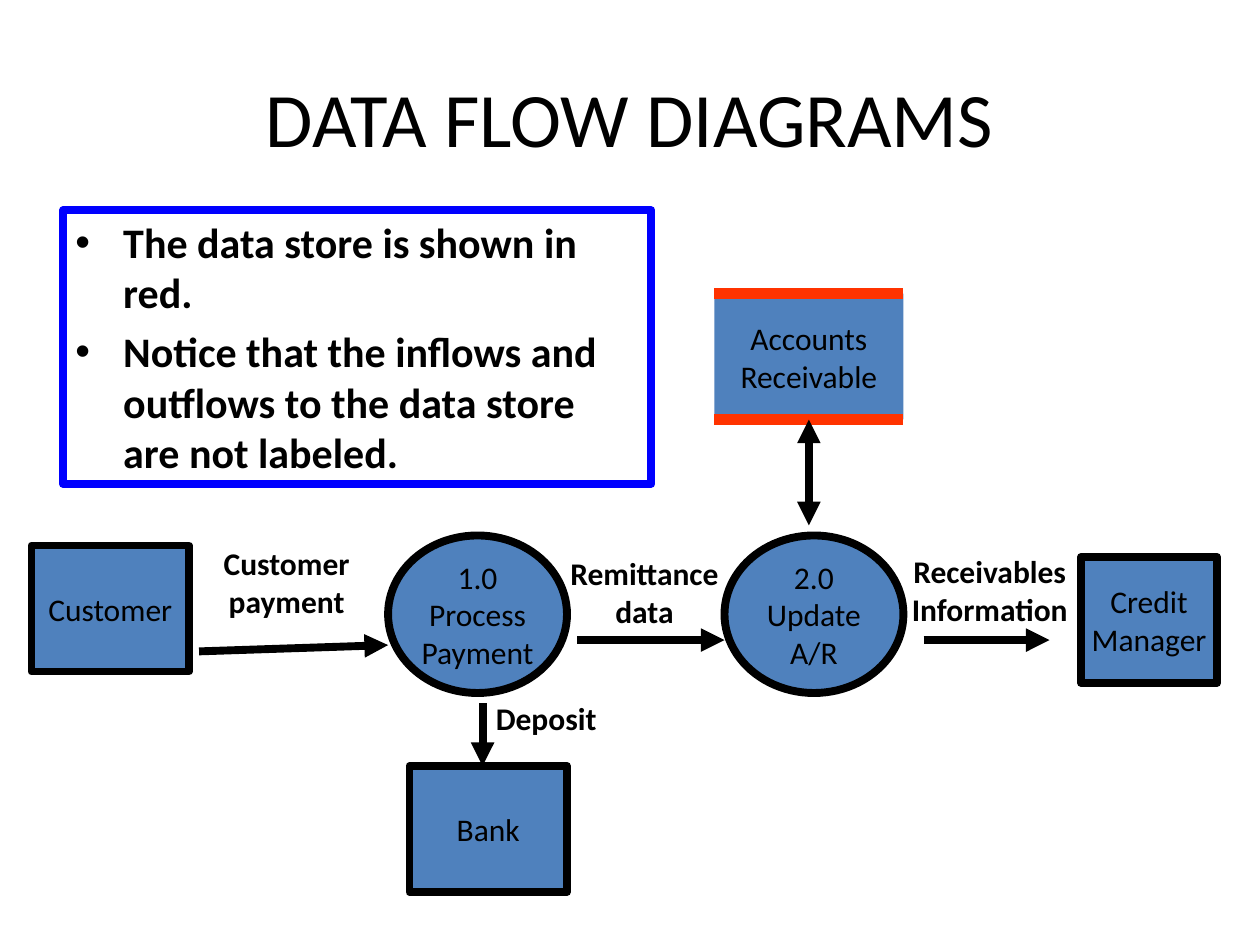
from lxml import etree
from pptx import Presentation
from pptx.dml.color import RGBColor
from pptx.enum.shapes import MSO_CONNECTOR, MSO_SHAPE
from pptx.enum.text import MSO_ANCHOR, MSO_AUTO_SIZE, PP_ALIGN
from pptx.oxml.ns import qn
from pptx.util import Pt

RECT, OVAL = MSO_SHAPE.RECTANGLE, MSO_SHAPE.OVAL
STRAIGHT = MSO_CONNECTOR.STRAIGHT
TOP, MIDDLE = MSO_ANCHOR.TOP, MSO_ANCHOR.MIDDLE
LEFT, CENTER = PP_ALIGN.LEFT, PP_ALIGN.CENTER
GROW = MSO_AUTO_SIZE.SHAPE_TO_FIT_TEXT

EMU_PER_PX = 9144
BLACK, WHITE, BLUE, RED, STEEL = "000000", "FFFFFF", "0000FF", "FF3300", "4F81BD"
STROKE, STORE_STROKE = 4.5, 6
BULLET_INDENT = 38


def px(*lengths):
    """Turn px lengths into EMU."""
    return [length * EMU_PER_PX for length in lengths]


def color(hex_value):
    """Turn a hex string into a colour."""
    return RGBColor.from_string(hex_value)


def inside(box, left, top, width, height):
    """Move an area given relative to a box onto the slide."""
    return box[0] + left, box[1] + top, width, height


def set_text(shape, text, size=18, bold=False, align=CENTER, **frame_format):
    """Write lines of text into a shape and format them."""
    frame = shape.text_frame
    frame.text = text
    for attribute, value in frame_format.items():
        setattr(frame, attribute, value)
    font_format = {"name": "Calibri", "size": Pt(size), "bold": bold}
    for paragraph in frame.paragraphs:
        paragraph.alignment = align
        for run in paragraph.runs:
            run.font.color.rgb = color(BLACK)
            for attribute, value in font_format.items():
                setattr(run.font, attribute, value)


def add_node(slide, area, kind, fill, outline=None):
    """Add a filled shape with an optional outline."""
    node = slide.shapes.add_shape(kind, *px(*area))
    node.shadow.inherit = False
    node.fill.solid()
    node.fill.fore_color.rgb = color(fill)
    if outline:
        node.line.color.rgb = color(outline)
        node.line.width = Pt(STROKE)
    else:
        node.line.fill.background()
    return node


def add_flow(slide, box, start, end, stroke=BLACK, width=STROKE, arrows=("tailEnd",)):
    """Add a straight line with arrowheads at the named ends."""
    ends = [box[axis] + point[axis] for point in (start, end) for axis in (0, 1)]
    flow = slide.shapes.add_connector(STRAIGHT, *px(*ends))
    flow.line.color.rgb = color(stroke)
    flow.line.width = Pt(width)
    properties = flow.line._get_or_add_ln()
    for arrow in arrows:
        etree.SubElement(properties, qn(f"a:{arrow}"), type="triangle")
    etree.SubElement(properties.getparent(), qn("a:effectLst"))


def add_title(slide, box):
    """Place the slide heading."""
    heading = slide.shapes.add_textbox(*px(*box))
    set_text(heading, "DATA FLOW DIAGRAMS", 44, word_wrap=True, vertical_anchor=MIDDLE)


def add_store(slide, box):
    """Place the data store between its two red rules."""
    left, top, width, height = box
    store = add_node(slide, box, RECT, STEEL)
    set_text(store, "Accounts\nReceivable", word_wrap=False, vertical_anchor=MIDDLE)
    for edge in (0, height):
        add_flow(slide, box, (0, edge), (width, edge), RED, STORE_STROKE, ())


def add_diagram(slide, box):
    """Place the entities, processes, data store, flows and flow labels."""
    nodes = [
        ("Customer", RECT, (0, 200, 125, 100)),
        ("1.0\nProcess\nPayment", OVAL, (283, 192, 142, 125)),
        ("2.0\nUpdate\nA/R", OVAL, (550, 192, 142, 125)),
        ("Credit\nManager", RECT, (833, 209, 108, 100)),
        ("Bank", RECT, (300, 375, 125, 100)),
    ]
    flows = [
        ((133, 284), (283, 279)),
        ((433, 275), (550, 275)),
        ((708, 275), (808, 275)),
        ((358, 325), (358, 375)),
    ]
    labels = [
        ("Customer\npayment", (142, 194, 121, 71)),
        ("Remittance\ndata", (417, 202, 139, 71)),
        ("Receivables\nInformation", (688, 200, 145, 71)),
        ("Deposit", (358, 317, 101, 40)),
    ]
    for text, kind, area in nodes:
        node = add_node(slide, inside(box, *area), kind, STEEL, BLACK)
        set_text(node, text, word_wrap=False, vertical_anchor=MIDDLE)
    add_store(slide, inside(box, 542, 0, 150, 100))
    for start, end in flows:
        add_flow(slide, box, start, end)
    add_flow(slide, box, (617, 184), (617, 100), arrows=("headEnd", "tailEnd"))
    for text, area in labels:
        label = slide.shapes.add_textbox(*px(*inside(box, *area)))
        set_text(label, text, bold=True, word_wrap=False, auto_size=GROW)


def add_notes_panel(slide, box):
    """Place the framed list of remarks on the data store."""
    remarks = (
        "The data store is shown in red.\n"
        "Notice that the inflows and outflows to the data store are not labeled."
    )
    panel = add_node(slide, box, RECT, WHITE, BLUE)
    set_text(panel, remarks, 24, True, LEFT, word_wrap=True, vertical_anchor=TOP)
    indent, = px(BULLET_INDENT)
    for paragraph in panel.text_frame.paragraphs:
        paragraph.space_before = Pt(4.8)
        properties = paragraph._p.get_or_add_pPr()
        properties.set("marL", str(indent))
        properties.set("indent", str(-indent))
        etree.SubElement(properties, qn("a:buFont"), typeface="Arial")
        etree.SubElement(properties, qn("a:buChar"), char="•")


def main():
    """Build and save the slide."""
    deck = Presentation()
    deck.slide_width, deck.slide_height = px(1000, 750)
    slide = deck.slides.add_slide(deck.slide_layouts[6])
    add_title(slide, (50, 30, 900, 125))
    add_diagram(slide, (25, 233, 941, 475))
    add_notes_panel(slide, (50, 167, 467, 217))
    deck.save("out.pptx")


if __name__ == "__main__":
    main()
